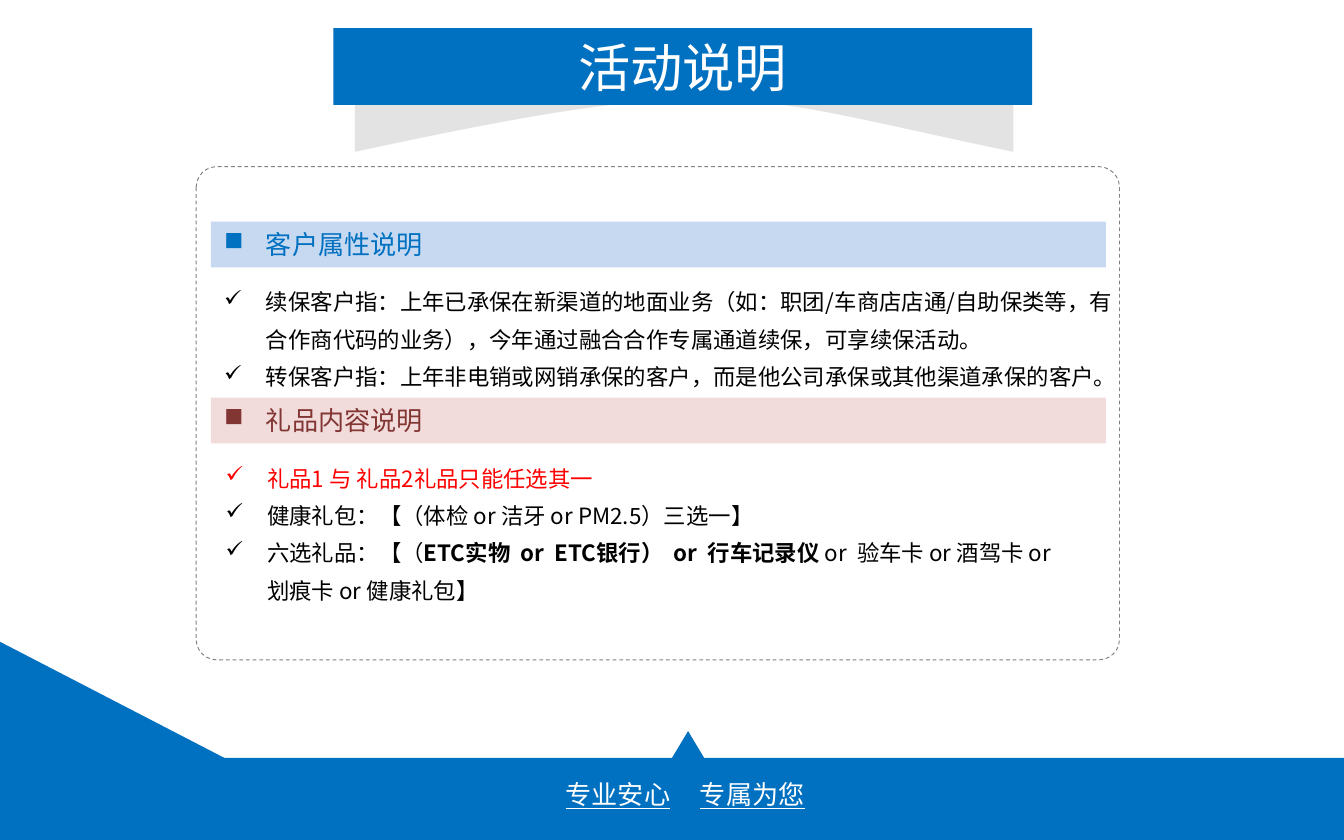
from dataclasses import dataclass

from lxml import etree
from pptx import Presentation
from pptx import util as u
from pptx.dml import color
from pptx.enum import dml, shapes, text
from pptx.oxml import ns


@dataclass
class Theme:
    blue: str = "0070C0"
    pale: str = "C6D9F1"
    wine: str = "823634"
    pink: str = "F2DCDB"
    red: str = "FF0000"
    black: str = "000000"
    white: str = "FFFFFF"
    gray: str = "808080"
    fold: str = "DDDDDD"
    sans: str = "Noto Sans CJK SC"
    head: str = "Cabin"
    big: int = 28
    mid: int = 14
    small: int = 12


theme = Theme()
rgb = color.RGBColor.from_string
kind = shapes.MSO_SHAPE

deck = Presentation()
deck.slide_width, deck.slide_height = u.Inches(10), u.Inches(6.25)
slide = deck.slides.add_slide(deck.slide_layouts[5])
tree = slide.shapes


def block(form, box, fill):
    """Add a preset shape without outline; fill None leaves it hollow."""
    shape = tree.add_shape(form, *map(u.Inches, box))
    shape.shadow.inherit = False
    shape.line.fill.background()
    if fill:
        shape.fill.solid()
        shape.fill.fore_color.rgb = rgb(fill)
    else:
        shape.fill.background()
    return shape


def write(para, words, size, font, ink, bold=False, mark=None):
    """Add one run; mark gives the paragraph a hanging bullet."""
    run = para.add_run()
    run.text = words
    run.font.size = u.Pt(size)
    run.font.name = font
    run.font.bold = bold
    run.font.color.rgb = rgb(ink)
    east = etree.SubElement(run.font._element, ns.qn("a:ea"))
    east.set("typeface", theme.sans)
    if mark:
        props = para._p.get_or_add_pPr()
        props.set("marL", str(u.Inches(0.31)))
        props.set("indent", str(-u.Inches(0.31)))
        etree.SubElement(props, ns.qn("a:buChar")).set("char", mark)
    return run


# Title banner above a folded ribbon with a curved lower edge
curve = [(7.54, 1.13), (5.46, 0.7), (5.47, 0.52), (2.64, 1.13)]
steps = 32
edge = []
for step in range(steps + 1):
    t = step / steps
    parts = [(1 - t) ** 3, 3 * t * (1 - t) ** 2, 3 * t * t * (1 - t), t ** 3]
    edge.append([u.Inches(sum(w * p[axis] for w, p in zip(parts, curve)))
                 for axis in (0, 1)])
pen = tree.build_freeform(u.Inches(2.64), u.Inches(0.51))
pen.add_line_segments([(u.Inches(7.54), u.Inches(0.51))] + edge, close=True)
fold = pen.convert_to_shape()
fold.shadow.inherit = False
fold.line.fill.background()
fold.fill.solid()
fold.fill.fore_color.rgb = rgb(theme.fold)
tint = fold.element.find(".//" + ns.qn("a:srgbClr"))
etree.SubElement(tint, ns.qn("a:alpha")).set("val", "80000")

title = tree.title
title.left, title.top = u.Inches(2.48), u.Inches(0.21)
title.width, title.height = u.Inches(5.2), u.Inches(0.57)
title.fill.solid()
title.fill.fore_color.rgb = rgb(theme.blue)
fold.element.addnext(title.element)
frame = title.text_frame
frame.auto_size = text.MSO_AUTO_SIZE.NONE
frame.vertical_anchor = text.MSO_ANCHOR.MIDDLE
frame.paragraphs[0].alignment = text.PP_ALIGN.CENTER
write(frame.paragraphs[0], "活动说明", theme.big, theme.sans, theme.white)

# Dashed panel with two headed lists
panel = block(kind.ROUNDED_RECTANGLE, (1.46, 1.24, 6.87, 3.67), None)
panel.adjustments[0] = 0.042
panel.line.color.rgb = rgb(theme.gray)
panel.line.width = u.Pt(0.5)
panel.line.dash_style = dml.MSO_LINE.DASH

heads = [
    (1.65, "客户属性说明", theme.pale, theme.blue),
    (2.96, "礼品内容说明", theme.pink, theme.wine),
]
for top, words, fill, ink in heads:
    bar = block(kind.RECTANGLE, (1.57, top, 6.66, 0.34), fill)
    bar.text_frame.vertical_anchor = text.MSO_ANCHOR.TOP
    para = bar.text_frame.paragraphs[0]
    para.alignment = text.PP_ALIGN.LEFT
    write(para, words, theme.mid, theme.head, ink, mark="■")

# Each item is an ink and its runs; every second run is bold
lists = [
    ((1.57, 2.02, 6.89, 0.94), [
        (theme.black, ["续保客户指：上年已承保在新渠道的地面业务（如：职团/车商店店通/自助保类等，"
                       "有合作商代码的业务），今年通过融合合作专属通道续保，可享续保活动。"]),
        (theme.black, ["转保客户指：上年非电销或网销承保的客户，"
                       "而是他公司承保或其他渠道承保的客户。"]),
    ]),
    ((1.58, 3.33, 6.5, 1.22), [
        (theme.red, ["礼品1 与 礼品2礼品只能任选其一"]),
        (theme.black, ["健康礼包：【（体检 or 洁牙 or PM2.5）三选一】"]),
        (theme.black, ["六选礼品：【（",
                       "ETC实物  or  ETC银行）  or  行车记录仪 ",
                       "or  验车卡 or 酒驾卡 or 划痕卡 or 健康礼包】"]),
    ]),
]
for box, items in lists:
    frame = tree.add_textbox(*map(u.Inches, box)).text_frame
    frame.word_wrap = True
    for row, (ink, runs) in enumerate(items):
        para = frame.add_paragraph() if row else frame.paragraphs[0]
        para.line_spacing = u.Pt(20)
        for col, words in enumerate(runs):
            write(para, words, theme.small, theme.sans, ink,
                  bold=col % 2 == 1, mark=None if col else "✓")

# Footer band with a slope and a pointer
block(kind.RECTANGLE, (-0.02, 5.64, 10.04, 0.87), theme.blue)
slope = block(kind.ISOSCELES_TRIANGLE, (-0.01, 4.77, 1.72, 0.89), theme.blue)
slope.adjustments[0] = 0
block(kind.ISOSCELES_TRIANGLE, (5, 5.44, 0.24, 0.2), theme.blue)

# Slogan halves are set apart by a tab stop
frame = tree.add_textbox(*map(u.Inches, (3.95, 5.74, 2.31, 0.34))).text_frame
frame.word_wrap = True
para = frame.paragraphs[0]
props = para._p.get_or_add_pPr()
props.set("marL", str(u.Inches(0.16)))
props.set("indent", "0")
stops = etree.SubElement(props, ns.qn("a:tabLst"))
stop = etree.SubElement(stops, ns.qn("a:tab"))
stop.set("pos", str(u.Inches(1.16)))
stop.set("algn", "l")
slogan = write(para, "专业安心\t专属为您", theme.mid, theme.head, theme.white)
slogan.font.underline = True

deck.save("out.pptx")
